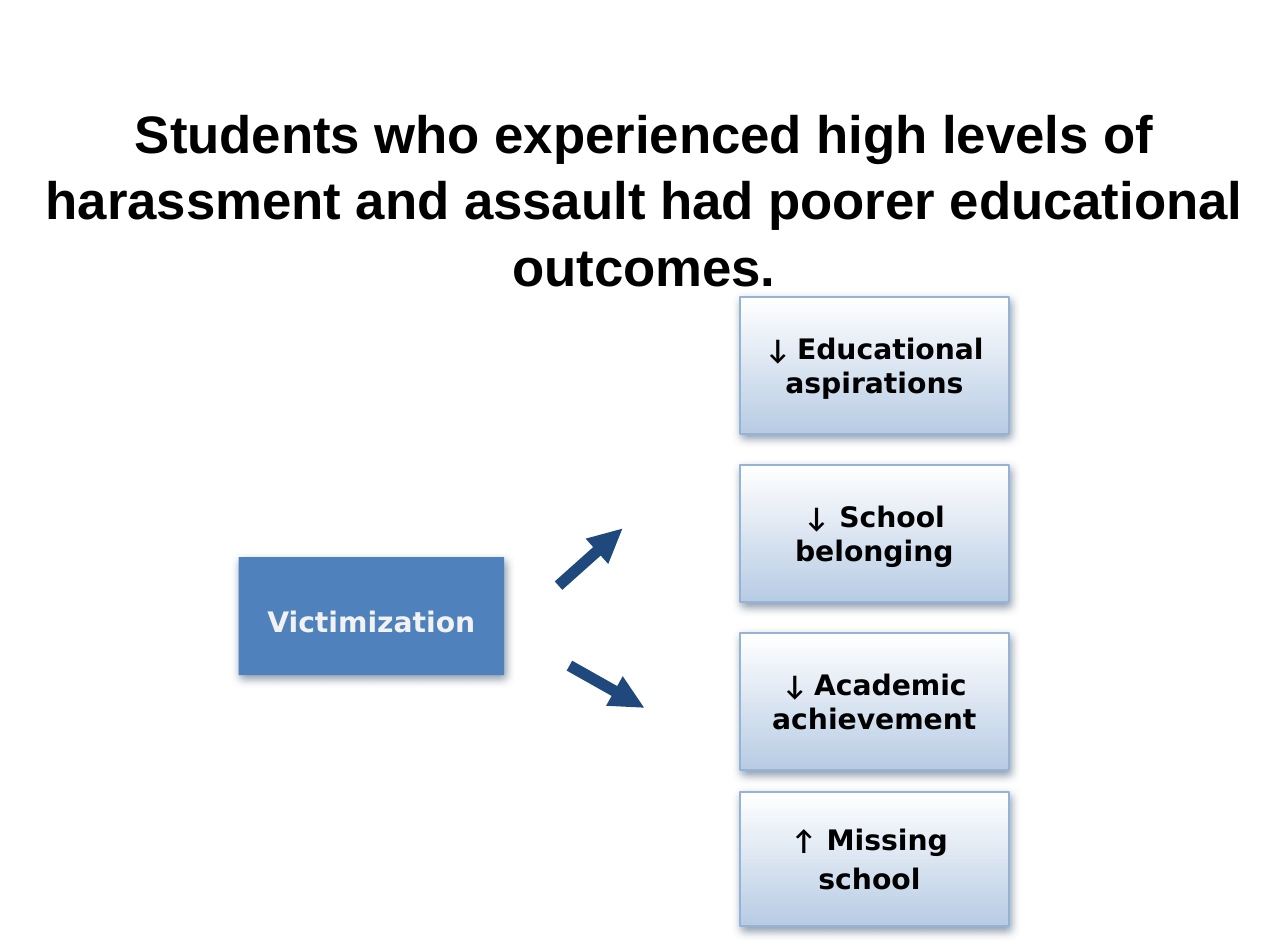
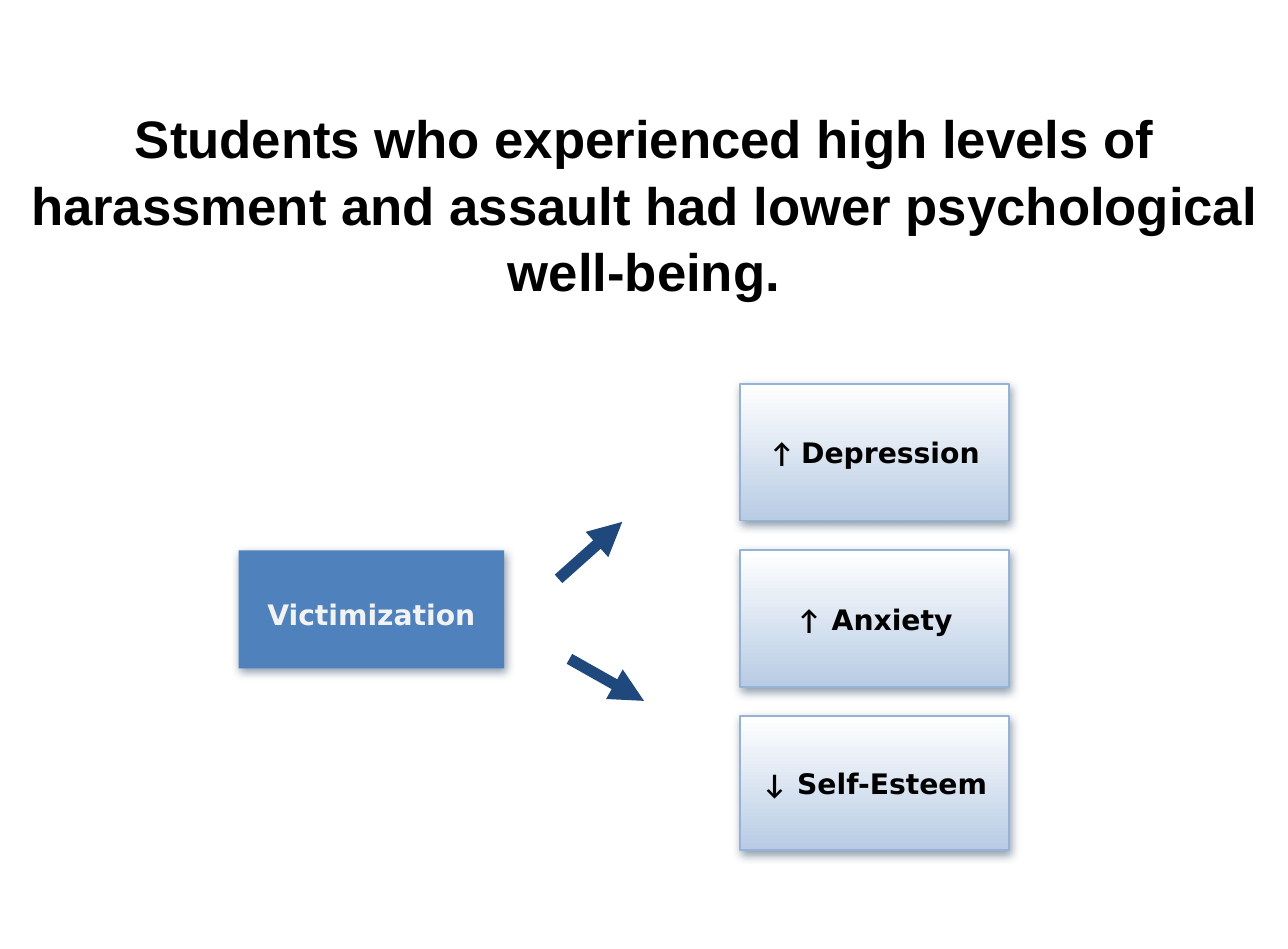
from lxml import etree
from pptx import Presentation
from pptx.dml.color import RGBColor
from pptx.enum.shapes import MSO_CONNECTOR, MSO_SHAPE
from pptx.enum.text import MSO_ANCHOR, PP_ALIGN
from pptx.oxml.ns import qn
from pptx.util import Inches, Pt

RECT = MSO_SHAPE.RECTANGLE
LINE = MSO_CONNECTOR.STRAIGHT
TOP, MIDDLE = MSO_ANCHOR.TOP, MSO_ANCHOR.MIDDLE
CENTER = PP_ALIGN.CENTER

# Shared colours and fonts
BLACK, WHITE, PALE = "000000", "FFFFFF", "F2F2F2"
BLUE, NAVY, EDGE, TINT, SHADE = "4F81BD", "1F497D", "95B3D7", "B8CCE4", "243F60"
HEAD, SIGN, BODY = "Arial", "Calibri", "DejaVu Sans"

# Shared layout
BOX_X, BOX_W, BOX_H, LAST_H = 5.46, 1.98, 1.01, 0.99


def rgb(code):
    return RGBColor.from_string(code)


def write(shape, paras, size=15, color=BLACK, anchor=MIDDLE, top=0.05,
          before=0, spacing=None):
    """Fill a shape with paragraphs, each a list of (text, font) runs."""
    frame = shape.text_frame
    frame.word_wrap = True
    frame.vertical_anchor = anchor
    frame.margin_left = frame.margin_right = Inches(0.09)
    frame.margin_top, frame.margin_bottom = Inches(top), Inches(0.05)
    for i, runs in enumerate(paras):
        para = frame.add_paragraph() if i else frame.paragraphs[0]
        para.alignment = CENTER
        if i:
            para.space_before = Pt(before)
        if spacing:
            para.line_spacing = spacing
        for text, name in runs:
            run = para.add_run()
            run.text = text
            font = run.font
            font.name, font.size, font.bold = name, Pt(size), True
            font.color.rgb = rgb(color)


def add_shade(shape):
    """Give a shape the soft shadow that all boxes share."""
    shape.shadow.inherit = False
    effects = shape._element.spPr.find(qn("a:effectLst"))
    outer = etree.SubElement(effects, qn("a:outerShdw"), blurRad=str(Pt(5)),
                             dist=str(Pt(2.3)), dir=str(65 * 60000),
                             algn="ctr", rotWithShape="0")
    tone = etree.SubElement(outer, qn("a:srgbClr"), val=SHADE)
    etree.SubElement(tone, qn("a:alpha"), val="50000")


def add_title(slide, text, top, anchor):
    box = slide.shapes.add_textbox(0, Inches(top), Inches(9.5), Inches(1.51))
    write(box, [[(text, HEAD)]], size=28, anchor=anchor, spacing=1.05)


def add_box(slide, x, y, w, h):
    box = slide.shapes.add_shape(RECT, Inches(x), Inches(y), Inches(w), Inches(h))
    add_shade(box)
    return box


def add_cause(slide, y):
    box = add_box(slide, 1.76, y, 1.96, 0.87)
    box.fill.solid()
    box.fill.fore_color.rgb = rgb(BLUE)
    box.line.fill.background()
    write(box, [[("Victimization", BODY)]], color=PALE, top=0.12)


def add_effect(slide, y, h, paras):
    box = add_box(slide, BOX_X, y, BOX_W, h)
    box.fill.gradient()
    box.fill.gradient_angle = 270
    for stop, place, code in zip(box.fill.gradient_stops, (0, 1), (WHITE, TINT)):
        stop.position = place
        stop.color.rgb = rgb(code)
    box.line.color.rgb = rgb(EDGE)
    box.line.width = Pt(1)
    write(box, paras, before=3)


def add_arrow(slide, x1, y1, x2, y2):
    arrow = slide.shapes.add_connector(LINE, Inches(x1), Inches(y1),
                                       Inches(x2), Inches(y2))
    arrow.line.color.rgb = rgb(NAVY)
    arrow.line.width = Pt(6)
    etree.SubElement(arrow.line._get_or_add_ln(), qn("a:tailEnd"), type="triangle")
    etree.SubElement(arrow._element.spPr, qn("a:effectLst"))


def add_slide(deck, title, top, anchor, mid, effects):
    """Title, cause box at height mid with two arrows, and effect boxes."""
    slide = deck.slides.add_slide(deck.slide_layouts[6])
    add_title(slide, title, top, anchor)
    add_cause(slide, mid)
    add_arrow(slide, 4.2, mid + 0.8, 4.75, mid + 1.11)
    add_arrow(slide, 4.12, mid + 0.21, 4.59, mid - 0.21)
    for y, h, paras in effects:
        add_effect(slide, y, h, paras)


def main():
    deck = Presentation()
    deck.slide_width, deck.slide_height = Inches(9.5), Inches(7)

    # Educational outcomes
    school = [
        (2.19, BOX_H, [[("↓ ", SIGN), ("Educational aspirations", BODY)]]),
        (3.43, BOX_H, [[("↓", SIGN), (" School belonging", BODY)]]),
        (4.67, BOX_H, [[("↓ ", SIGN), ("Academic achievement", BODY)]]),
        (5.84, LAST_H, [[("↑", SIGN), (" Missing ", BODY)], [("school ", BODY)]]),
    ]
    add_slide(deck, "Students who experienced high levels of harassment and "
              "assault had poorer educational outcomes.", 0.67, TOP, 4.11, school)

    # Psychological well-being
    mind = [
        (2.83, BOX_H, [[("↑ ", SIGN), ("Depression", BODY)]]),
        (4.06, BOX_H, [[("↑", SIGN), (" Anxiety", BODY)]]),
        (5.28, LAST_H, [[("↓", SIGN), (" Self-Esteem", BODY)]]),
    ]
    add_slide(deck, "Students who experienced high levels of harassment and "
              "assault had lower psychological well-being.", 0.74, MIDDLE, 4.06, mind)

    deck.save("out.pptx")


if __name__ == "__main__":
    main()
